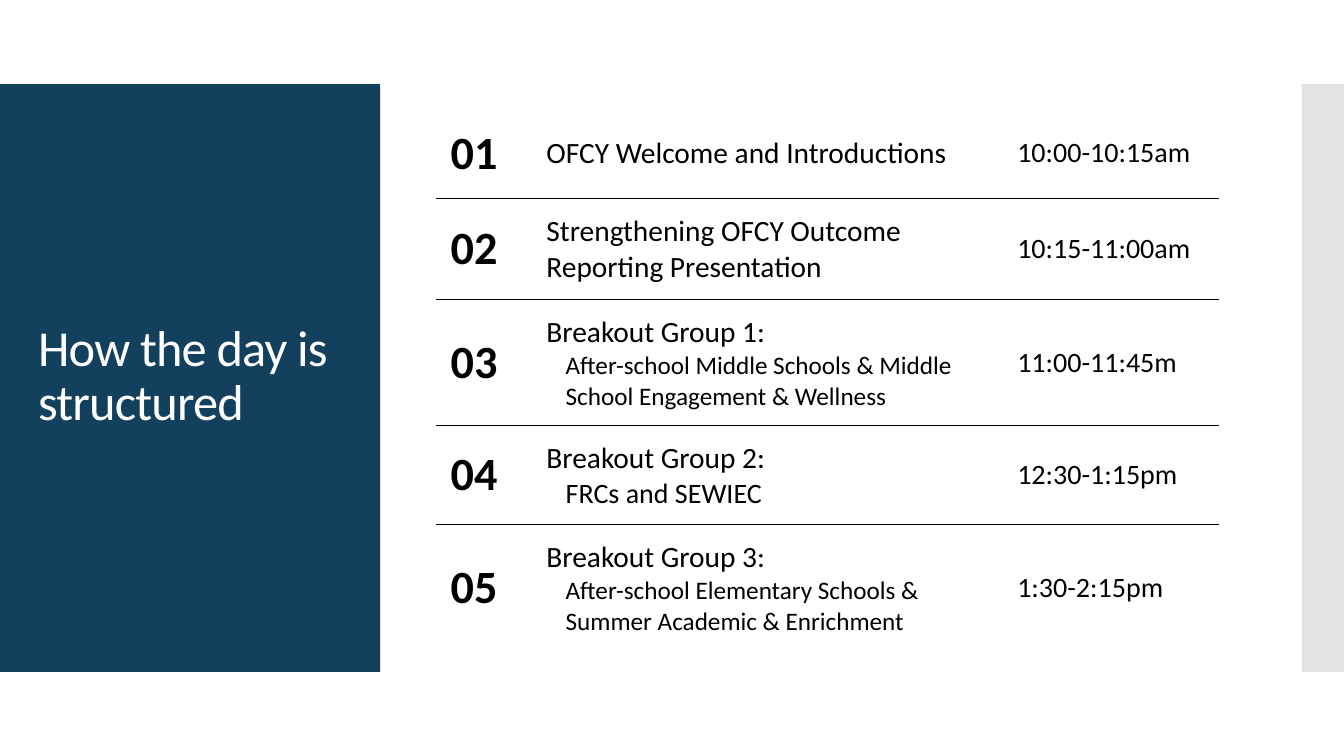
import pptx
import pptx.util
import pptx.dml.color
import pptx.enum.shapes
import pptx.enum.text
import pptx.oxml
from lxml import etree

Inches, Pt = pptx.util.Inches, pptx.util.Pt
RGBColor = pptx.dml.color.RGBColor
MIDDLE = pptx.enum.text.MSO_ANCHOR.MIDDLE
NS = 'xmlns:a="http://schemas.openxmlformats.org/drawingml/2006/main"'

NAVY = RGBColor(0x13, 0x41, 0x5D)
GREY = RGBColor(0xC8, 0xC8, 0xC8)
WHITE = RGBColor(0xFF, 0xFF, 0xFF)
BLACK = RGBColor(0, 0, 0)

AGENDA = [
    ("01", "OFCY Welcome and Introductions", None, 0, "10:00-10:15am"),
    ("02", "Strengthening OFCY Outcome Reporting Presentation", None, 0, "10:15-11:00am"),
    ("03", "Breakout Group 1:",
     "After-school Middle Schools & Middle School Engagement & Wellness", 18, "11:00-11:45m"),
    ("04", "Breakout Group 2:", "FRCs and SEWIEC", 20, "12:30-1:15pm"),
    ("05", "Breakout Group 3:",
     "After-school Elementary Schools & Summer Academic & Enrichment", 18, "1:30-2:15pm"),
]


def add_run(p, text, size, color=BLACK, bold=False):
    r = p.add_run()
    r.text = text
    r.font.name = "Calibri"
    r.font.size = Pt(size)
    r.font.bold = bold
    r.font.color.rgb = color
    return r


prs = pptx.Presentation()
prs.slide_width, prs.slide_height = Inches(13.33), Inches(7.5)
s = prs.slides.add_slide(prs.slide_layouts[6])
W, H = prs.slide_width, prs.slide_height

# Side panels: grey strip on the right, navy panel on the left
band_top, band_height = int(H / 9), int(H * 7 / 9)
panel_width, strip_width = Inches(3.77), Inches(0.42)
for left, width, color in ((W - strip_width, strip_width, GREY), (0, panel_width, NAVY)):
    sp = s.shapes.add_shape(pptx.enum.shapes.MSO_SHAPE.RECTANGLE,
                            left, band_top, width, band_height)
    sp.shadow.inherit = False
    sp.fill.solid()
    sp.fill.fore_color.rgb = color
    sp.line.fill.background()
    if color == GREY:
        srgb = sp.fill._xPr.find(".//{*}srgbClr")
        srgb.append(pptx.oxml.parse_xml(f'<a:alpha {NS} val="50000"/>'))

# Title
tf = s.shapes.add_textbox(Inches(0.28), Inches(1.23), Inches(3.22), Inches(5.03)).text_frame
tf.word_wrap = True
tf.vertical_anchor = MIDDLE
p = tf.paragraphs[0]
p.line_spacing = 0.9
r = add_run(p, "How the day is structured", 36, WHITE)
r.font._element.set("spc", "-60")

# Agenda table without banding
row_height = 0.9
table = s.shapes.add_table(len(AGENDA), 3, Inches(4.32), Inches(1.07), Inches(7.77),
                           Inches(row_height * len(AGENDA))).table
table.first_row = table.horz_banding = False
table._tbl.tblPr.find("{*}tableStyleId").text = "{2D5ABB26-0587-4C30-8999-92F81FD0307C}"
for column, width in zip(table.columns, (0.95, 4.67, 2.15)):
    column.width = Inches(width)

for i, (number, topic, detail, detail_size, time) in enumerate(AGENDA):
    table.rows[i].height = Inches(row_height)
    for j, (text, size) in enumerate(((number, 33), (topic, 21), (time, 20))):
        cell = table.cell(i, j)
        cell.vertical_anchor = MIDDLE
        cell.margin_left = cell.margin_right = Inches(0.15)
        cell.margin_top = cell.margin_bottom = Inches(0.15)
        add_run(cell.text_frame.paragraphs[0], text, size, bold=j == 0)
        if j == 1 and detail:
            p = cell.text_frame.add_paragraph()
            p._p.get_or_add_pPr().set("marL", str(Inches(0.19)))
            add_run(p, detail, detail_size)

        # Thin rules between rows only
        tcPr = cell._tc.get_or_add_tcPr()
        for edge, shown in (("lnT", i > 0), ("lnB", i < len(AGENDA) - 1)):
            if shown:
                ln = etree.SubElement(tcPr, pptx.oxml.ns.qn(f"a:{edge}"), w=str(Pt(0.5)))
                ln.append(pptx.oxml.parse_xml(
                    f'<a:solidFill {NS}><a:srgbClr val="{BLACK}"/></a:solidFill>'))
        cell.fill.background()

prs.save("out.pptx")
